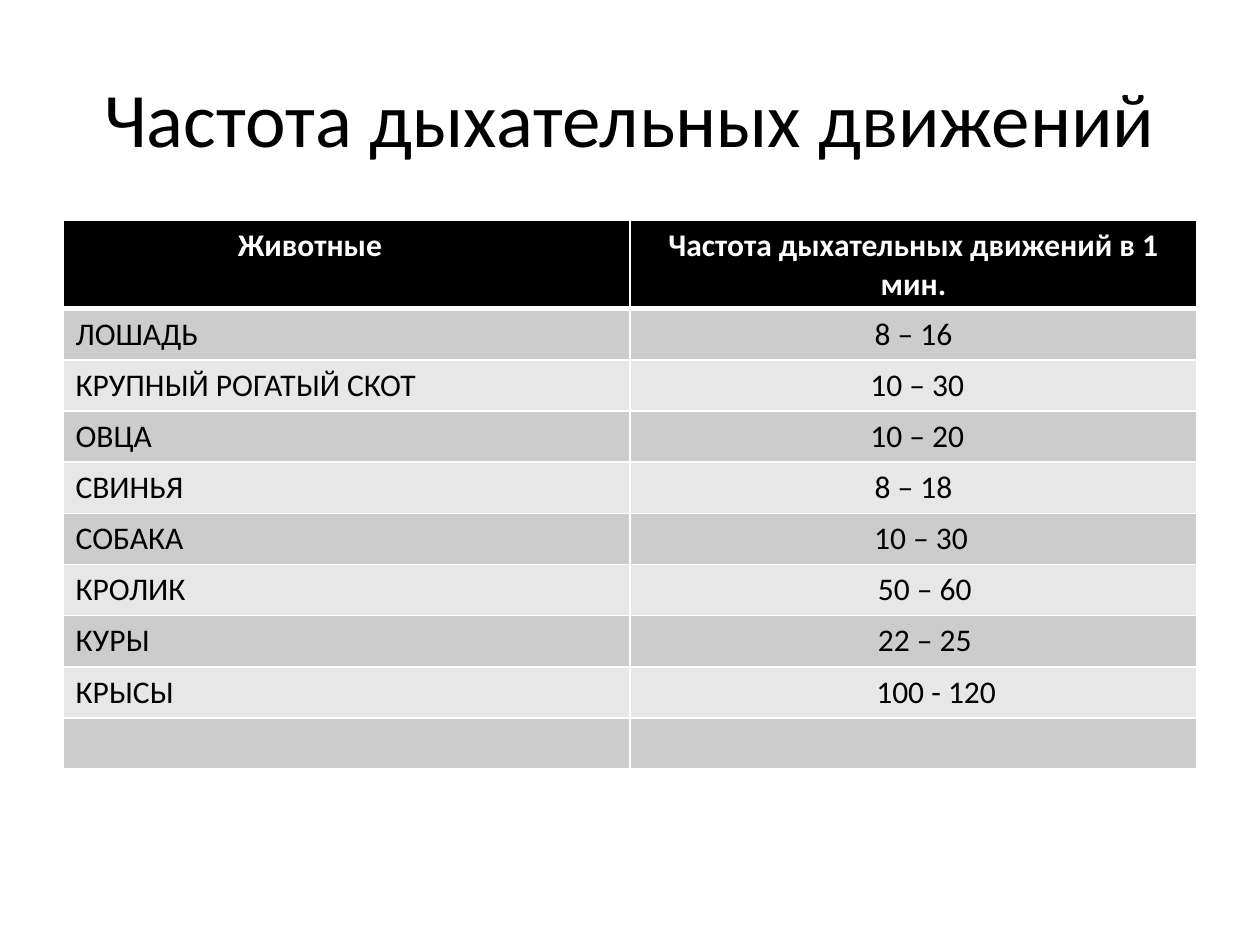
from lxml import etree
from pptx import Presentation
from pptx.dml.color import RGBColor
from pptx.enum.text import MSO_ANCHOR, PP_ALIGN
from pptx.oxml.ns import qn
from pptx.util import Inches, Pt

LEFT, CENTER = PP_ALIGN.LEFT, PP_ALIGN.CENTER
MIDDLE = MSO_ANCHOR.MIDDLE
FONT = "Calibri"
BLACK, WHITE = "000000", "FFFFFF"
BANDS = ("CCCCCC", "E7E7E7")
PAD, STEP = 0.1, 0.06  # cell margin and unit of extra indent, inches
HEAD = (("Животные", 21.5), ("Частота дыхательных движений в 1 мин.", 0))
# animal, breaths per minute, extra indent in steps
ROWS = (
    ("ЛОШАДЬ", "8 – 16", 0),
    ("КРУПНЫЙ РОГАТЫЙ СКОТ", "10 – 30", 1),
    ("ОВЦА", "10 – 20", 1),
    ("СВИНЬЯ", "8 – 18", 0),
    ("СОБАКА", "10 – 30", 2),
    ("КРОЛИК", "50 – 60", 3),
    ("КУРЫ", "22 – 25", 3),
    ("КРЫСЫ", "100 - 120", 6),
    ("", "", 0),
)


def color(code):
    return RGBColor.from_string(code)


def style(para, size, code, align, bold=False):
    para.alignment = align
    font = para.font
    font.name, font.size, font.bold = FONT, Pt(size), bold
    font.color.rgb = color(code)


def edge(cell, side, width):
    line = etree.SubElement(cell._tc.get_or_add_tcPr(), qn("a:ln" + side),
                            w=str(Pt(width)))
    fill = etree.SubElement(line, qn("a:solidFill"))
    etree.SubElement(fill, qn("a:srgbClr"), val=WHITE)


def fill_cell(cell, text, row, align, indent):
    head = row == 0
    # Borders come before the fill
    for side in "LRTB":
        thick = (side == "B" and head) or (side == "T" and row == 1)
        edge(cell, side, 3 if thick else 1)
    cell.fill.solid()
    cell.fill.fore_color.rgb = color(BLACK if head else BANDS[(row - 1) % 2])
    cell.margin_left = Inches(PAD + indent * STEP)
    cell.text = text
    style(cell.text_frame.paragraphs[0], 18, WHITE if head else BLACK,
          align, head)


def add_title(slide, box):
    frame = slide.shapes.add_textbox(*box).text_frame
    frame.word_wrap = True
    frame.vertical_anchor = MIDDLE
    frame.text = "Частота дыхательных движений"
    style(frame.paragraphs[0], 44, BLACK, CENTER)


def add_rates(slide, box):
    height = box[3]
    table = slide.shapes.add_table(len(ROWS) + 1, 2, *box).table
    # The header takes two lines, the other rows share the rest
    top = int(height * 0.16)
    for row in table.rows:
        row.height = (height - top) // len(ROWS)
    table.rows[0].height = top
    for col, (text, indent) in enumerate(HEAD):
        fill_cell(table.cell(0, col), text, 0, CENTER if col else LEFT, indent)
    for row, (name, rate, indent) in enumerate(ROWS, 1):
        fill_cell(table.cell(row, 0), name, row, LEFT, 0)
        fill_cell(table.cell(row, 1), rate, row, CENTER, indent)


def main():
    deck = Presentation()
    deck.slide_width, deck.slide_height = Inches(10), Inches(7.5)
    wide, high = deck.slide_width, deck.slide_height
    slide = deck.slides.add_slide(deck.slide_layouts[6])

    def area(top, tall):
        return (int(wide * 0.05), int(high * top),
                int(wide * 0.9), int(high * tall))

    add_title(slide, area(0.04, 1 / 6))
    add_rates(slide, area(7 / 30, 0.58))
    deck.save("out.pptx")


if __name__ == "__main__":
    main()
